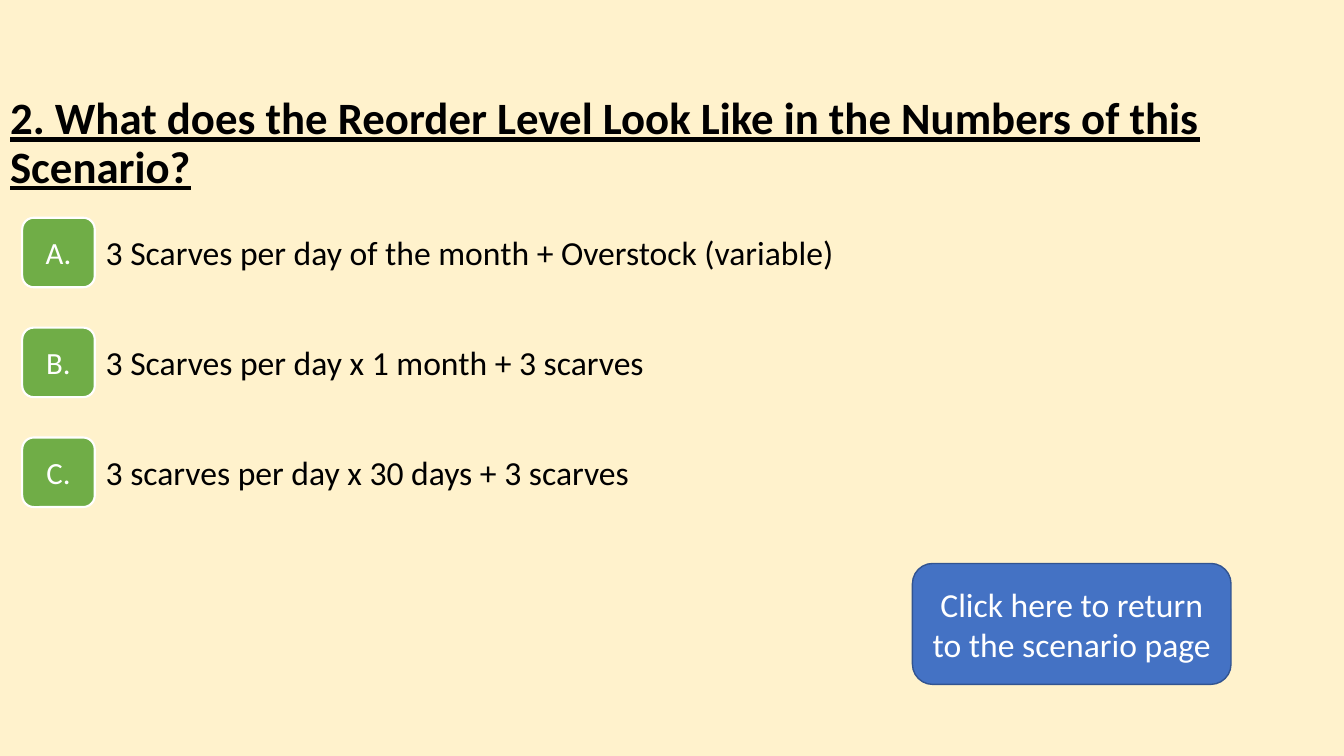
from dataclasses import dataclass

from pptx import Presentation
from pptx.dml.color import RGBColor
from pptx.enum.shapes import MSO_SHAPE
from pptx.enum.text import MSO_ANCHOR, MSO_AUTO_SIZE, PP_ALIGN
from pptx.util import Pt

EMU_PER_PX = 9144  # 100 px to the inch


@dataclass(frozen=True)
class Theme:
    font: str = "Calibri"
    background: str = "FFF2CC"
    ink: str = "000000"
    light: str = "FFFFFF"
    badge: str = "70AD47"
    button: str = "4472C4"
    button_line: str = "325491"
    title_size: int = 32
    text_size: int = 24
    badge_size: int = 22


THEME = Theme()
QUESTION = "2. What does the Reorder Level Look Like in the Numbers of this Scenario?"
ANSWERS = [
    ("A.", "3 Scarves per day of the month + Overstock (variable)"),
    ("B.", "3 Scarves per day x 1 month + 3 scarves"),
    ("C.", "3 scarves per day x 30 days + 3 scarves"),
]


def px(*lengths):
    return [length * EMU_PER_PX for length in lengths]


def rgb(color):
    return RGBColor.from_string(color)


def set_text(sp, text, size=THEME.text_size, color=THEME.ink, bold=False,
             underline=False, align=PP_ALIGN.LEFT, anchor=MSO_ANCHOR.MIDDLE,
             spacing=1.0):
    tf = sp.text_frame
    tf.word_wrap = True
    tf.auto_size = MSO_AUTO_SIZE.NONE
    tf.vertical_anchor = anchor
    p = tf.paragraphs[0]
    p.alignment = align
    p.line_spacing = spacing
    r = p.add_run()
    r.text = text
    r.font.name = THEME.font
    r.font.size = Pt(size)
    r.font.color.rgb = rgb(color)
    r.font.bold = bold
    r.font.underline = underline


def add_rounded_box(s, box, text, size, fill, line, line_width):
    sp = s.shapes.add_shape(MSO_SHAPE.ROUNDED_RECTANGLE, *px(*box))
    sp.shadow.inherit = False
    sp.fill.solid()
    sp.fill.fore_color.rgb = rgb(fill)
    sp.line.color.rgb = rgb(line)
    sp.line.width = Pt(line_width)
    set_text(sp, text, size=size, color=THEME.light, align=PP_ALIGN.CENTER)


def add_question(s, box):
    title = s.shapes.title
    title.left, title.top, title.width, title.height = px(*box)
    set_text(title, QUESTION, size=THEME.title_size, bold=True,
             underline=True, spacing=0.9)


def add_answer(s, box, letter, answer):
    left, top, width, height = box
    badge_width, gap, text_height = 72, 1, 50
    add_rounded_box(s, (left, top, badge_width, height), letter,
                    THEME.badge_size, THEME.badge, THEME.light, 1.5)
    indent = badge_width + gap
    text_top = top + (height - text_height) // 2
    sp = s.shapes.add_textbox(
        *px(left + indent, text_top, width - indent, text_height))
    set_text(sp, answer, anchor=MSO_ANCHOR.TOP)


def add_answers(s, box, pitch):
    left, top, width, row_height = box
    for i, (letter, answer) in enumerate(ANSWERS):
        add_answer(s, (left, top + i * pitch, width, row_height), letter, answer)


def add_return_button(s, box):
    add_rounded_box(s, box, "Click here to return to the scenario page",
                    THEME.text_size, THEME.button, THEME.button_line, 1)


def main():
    prs = Presentation()
    prs.slide_width, prs.slide_height = px(1333, 750)
    s = prs.slides.add_slide(prs.slide_layouts.get_by_name("Title Only"))
    s.background.fill.solid()
    s.background.fill.fore_color.rgb = rgb(THEME.background)
    add_question(s, (0, 71, 1362, 145))
    add_answers(s, (22, 216, 883, 69), pitch=109)
    add_return_button(s, (905, 559, 316, 120))
    prs.save("out.pptx")


if __name__ == "__main__":
    main()
